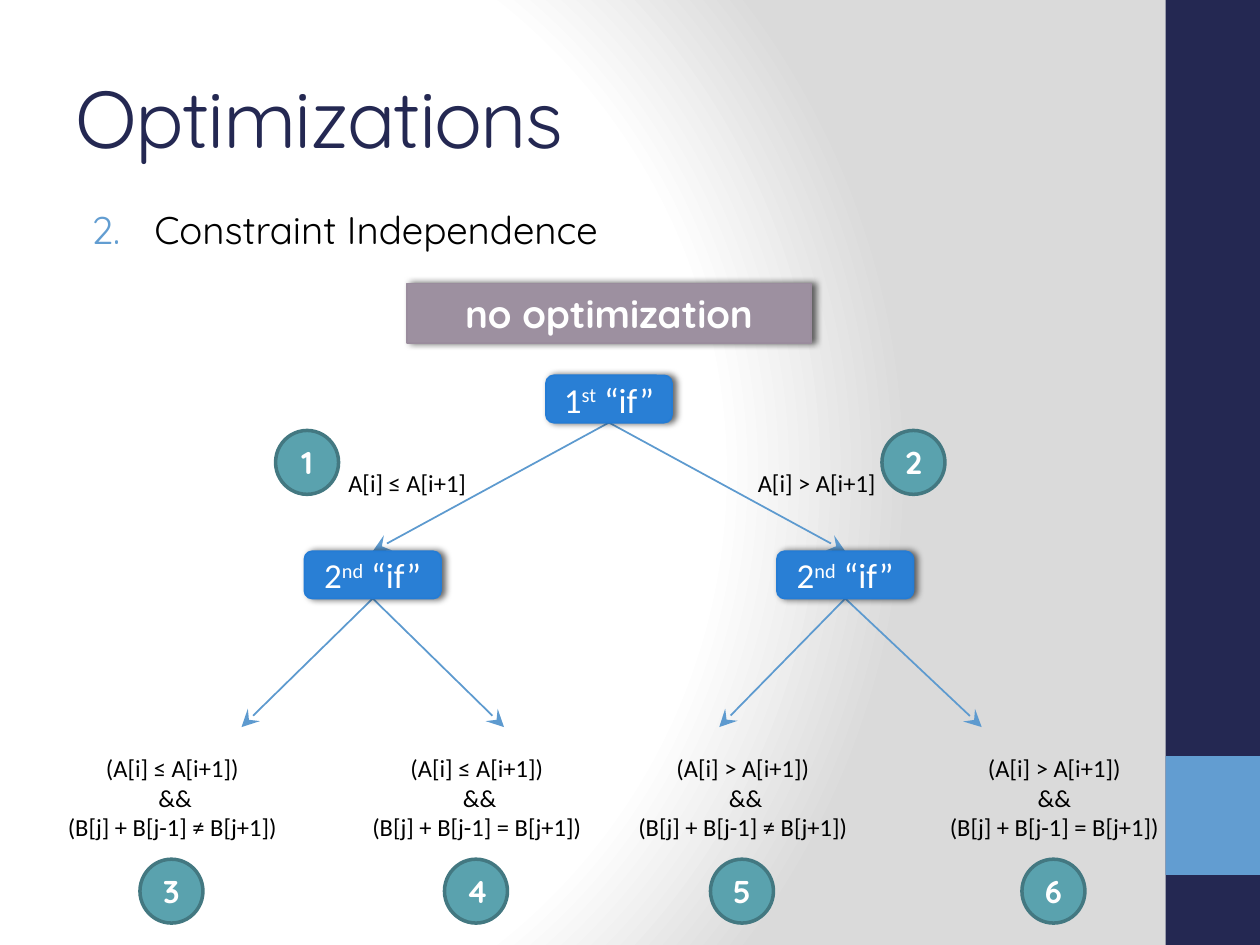
import pptx
import pptx.util
import pptx.dml.color
import pptx.enum.shapes
import pptx.enum.text
import pptx.oxml
import pptx.oxml.ns

Pt = pptx.util.Pt
qn = pptx.oxml.ns.qn
KIND = pptx.enum.shapes.MSO_SHAPE
ANCHOR = pptx.enum.text.MSO_ANCHOR
FIT = pptx.enum.text.MSO_AUTO_SIZE
ALIGN = pptx.enum.text.PP_ALIGN
NS = 'xmlns:a="http://schemas.openxmlformats.org/drawingml/2006/main"'


def paint(target, color):
    """Colour a font, line or fill from a hex string."""
    fill = target if hasattr(target, "solid") else target.fill
    fill.solid()
    fill.fore_color.rgb = pptx.dml.color.RGBColor.from_string(color)


def write(par, text, size, face, color, bold=False, align=ALIGN.CENTER):
    """Add one formatted run to a paragraph."""
    par.alignment = align
    run = par.add_run()
    run.text = text
    run.font.size = Pt(size)
    run.font.name = face
    run.font.bold = bold
    paint(run.font, color)
    return run


deck = pptx.Presentation()
deck.slide_width, deck.slide_height = Pt(720), Pt(540)
slide = deck.slides.add_slide(deck.slide_layouts[1])
shapes = slide.shapes

# Background: radial gradient
slide.background.fill.solid()
props = slide.element.find(".//" + qn("p:bgPr"))
stops = "".join(
    f'<a:gs pos="{pos * 1000}"><a:srgbClr val="{color}"/></a:gs>'
    for pos, color in ((0, "FFFFFF"), (75, "FFFFFF"), (100, "DADADA")))
props.replace(props.find(qn("a:solidFill")), pptx.oxml.parse_xml(
    f'<a:gradFill {NS} rotWithShape="1"><a:gsLst>{stops}</a:gsLst>'
    '<a:path path="circle"><a:fillToRect l="20000" t="50000" r="100000" b="50000"/>'
    '</a:path></a:gradFill>'))

# Side bar
for top, height, color in ((0, 540, "242852"), (432, 68, "629DD1")):
    bar = shapes.add_shape(KIND.RECTANGLE, Pt(666), Pt(top), Pt(54), Pt(height))
    bar.shadow.inherit = False
    paint(bar.fill, color)
    bar.line.fill.background()

# Title and numbered list
title, body = shapes.title, slide.placeholders[1]
for holder, top, height in ((title, 21.6, 90), (body, 114, 36)):
    holder.left, holder.top = Pt(36), Pt(top)
    holder.width, holder.height = Pt(600), Pt(height)
    holder.text_frame.auto_size = FIT.NONE
title.text_frame.vertical_anchor = ANCHOR.MIDDLE
run = write(title.text_frame.paragraphs[0], "Optimizations", 46, "Quicksand",
            "242852", align=ALIGN.LEFT)
run.font._element.set("spc", "-100")
item = body.text_frame.paragraphs[0]
write(item, "Constraint Independence", 22, "Quicksand", "000000", align=ALIGN.LEFT)
style = item._p.get_or_add_pPr()
style.set("marL", str(Pt(45)))
style.set("indent", str(Pt(-36)))
for xml in (f'<a:buClr {NS}><a:srgbClr val="629DD1"/></a:buClr>',
            f'<a:buFont {NS} typeface="+mj-lt"/>',
            f'<a:buAutoNum {NS} type="arabicPeriod" startAt="2"/>'):
    style.append(pptx.oxml.parse_xml(xml))

# Branch arrows: from each node to its two children
for x, y, ends, bottom in ((348, 241.5, (213, 483), 315),
                           (213, 342, (138, 288), 415.5),
                           (483, 342, (411, 561), 415.5)):
    for end in ends:
        link = shapes.add_connector(pptx.enum.shapes.MSO_CONNECTOR.STRAIGHT,
                                    Pt(x), Pt(y), Pt(end), Pt(bottom))
        link.line.width = Pt(1)
        paint(link.line, "5D9ACF")
        link.line._get_or_add_ln().append(pptx.oxml.parse_xml(
            f'<a:tailEnd {NS} type="stealth" w="lg" len="lg"/>'))
        link._element.spPr.append(pptx.oxml.parse_xml(f'<a:effectLst {NS}/>'))

# Banner and decision nodes, all with a soft shadow
NODE = (KIND.ROUNDED_RECTANGLE, "297FD5", "247CD5")
BAND = (KIND.RECTANGLE, "9D90A0", "9A8C9D")
for (kind, color, edge), mid, top, width, height, parts in (
        (NODE, 348, 214.5, 72, 27, ("1", "st", " “if”")),
        (NODE, 213, 315, 78, 27, ("2", "nd", " “if”")),
        (NODE, 483, 315, 78, 27, ("2", "nd", " “if”")),
        (BAND, 348, 162, 231, 34, ("no optimization",))):
    box = shapes.add_shape(kind, Pt(mid - width / 2), Pt(top), Pt(width), Pt(height))
    paint(box.fill, color)
    paint(box.line, edge)
    box.line.width = Pt(1)
    box._element.spPr.append(pptx.oxml.parse_xml(
        f'<a:effectLst {NS}><a:outerShdw blurRad="{Pt(4)}" dist="{Pt(2)}" dir="0"'
        ' rotWithShape="0"><a:srgbClr val="000000"><a:alpha val="60000"/></a:srgbClr>'
        '</a:outerShdw></a:effectLst>'))
    frame = box.text_frame
    frame.vertical_anchor = ANCHOR.MIDDLE
    for part in parts:
        if kind == KIND.RECTANGLE:
            write(frame.paragraphs[0], part, 22, "Quicksand", "FFFFFF", bold=True)
        else:
            run = write(frame.paragraphs[0], part, 20, "Calibri", "FFFFFF")
            if part in ("st", "nd"):
                run.font._element.set("baseline", "30000")

# Branch conditions and path constraints
LE, GT = "A[i] ≤ A[i+1]", "A[i] > A[i+1]"
NE, EQ = "(B[j] + B[j-1] ≠ B[j+1])", "(B[j] + B[j-1] = B[j+1])"
leaves = (12, 186, 338, 516)
notes = [(192, 264, 114, 24, ALIGN.LEFT, (LE,)),
         (426, 264, 114, 24, ALIGN.LEFT, (GT,))]
for left, first, both, last in zip(leaves, (LE, LE, GT, GT),
                                   (" &&", " &&", " &&", "&&"), (NE, EQ, NE, EQ)):
    notes.append((left, 427, 173, 58, ALIGN.CENTER, (f"({first})", both, last)))
for left, top, width, height, align, lines in notes:
    note = shapes.add_textbox(Pt(left), Pt(top), Pt(width), Pt(height))
    frame = note.text_frame
    frame.word_wrap = True
    frame.auto_size = FIT.SHAPE_TO_FIT_TEXT
    for row, line in enumerate(lines):
        par = frame.add_paragraph() if row else frame.paragraphs[0]
        write(par, line, 14, "Calibri", "000000", align=align)

# Numbered circles
spots = [(157.5, 246), (504, 246)] + [(left + 68, 491) for left in leaves]
for num, (left, top) in enumerate(spots, 1):
    disc = shapes.add_shape(KIND.OVAL, Pt(left), Pt(top), Pt(36), Pt(36.5))
    disc.shadow.inherit = False
    paint(disc.fill, "5AA2AE")
    paint(disc.line, "437881")
    disc.line.width = Pt(2)
    disc.text_frame.vertical_anchor = ANCHOR.MIDDLE
    write(disc.text_frame.paragraphs[0], str(num), 18, "Quicksand", "FFFFFF", bold=True)

deck.save("out.pptx")
